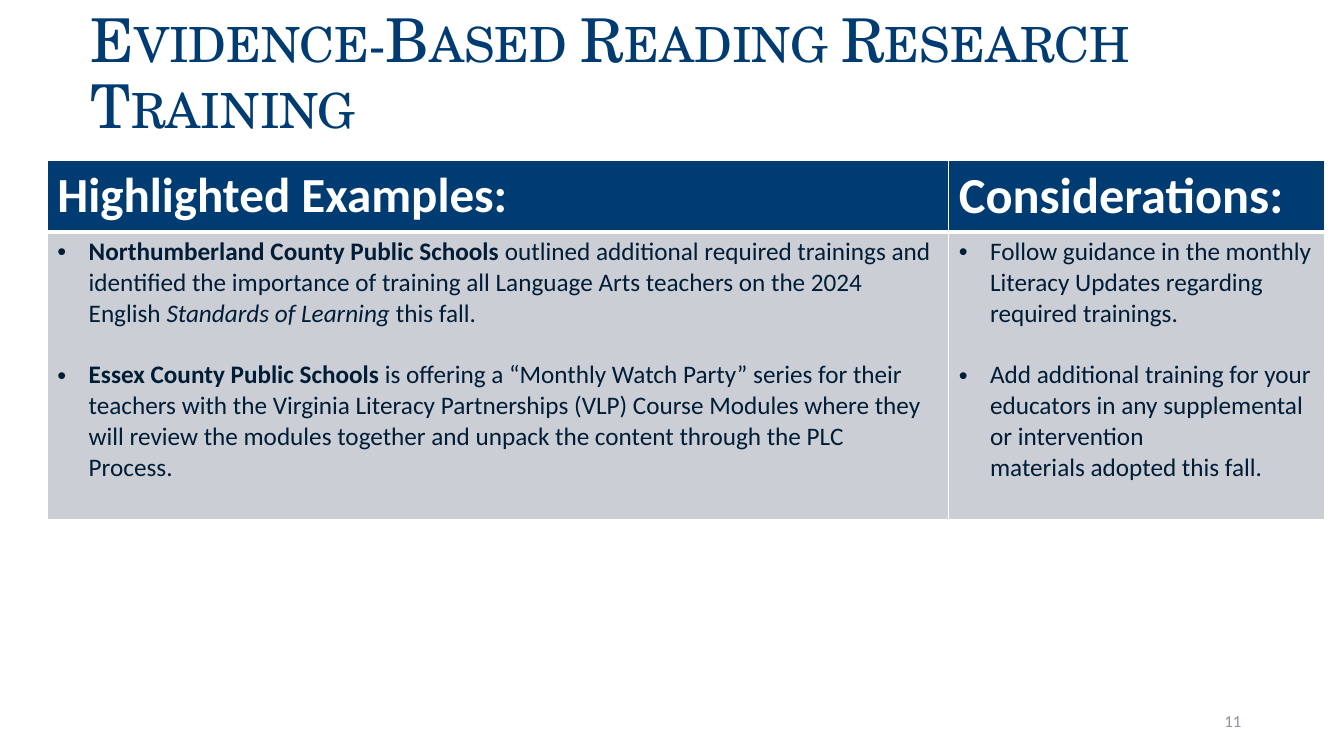
from pptx import Presentation
from pptx.dml.color import RGBColor
from pptx.enum.text import MSO_ANCHOR, PP_ALIGN
from pptx.oxml.ns import qn
from pptx.util import Inches, Pt
from lxml.etree import SubElement

COLORS = {"navy": "003C71", "ink": "001D37", "band": "CCCED5",
          "white": "FFFFFF", "grey": "8C92A5"}
SERIF, SANS = "TeX Gyre Schola", "Calibri"
NBSP = chr(160)  # keeps neighbouring words on one line


class SlideBuilder:
    def __init__(self, prs):
        self.s = prs.slides.add_slide(prs.slide_layouts[6])

    def run(self, p, text, size, color, font=SANS, style=""):
        r = p.add_run()
        r.text = text
        r.font.size, r.font.name = Pt(size), font
        r.font.bold, r.font.italic = style == "bold", style == "italic"
        r.font.color.rgb = RGBColor.from_string(COLORS[color])
        if style == "caps":
            r.font._element.set("cap", "small")

    def text(self, box, text, size, color, font=SANS, style="",
             align=PP_ALIGN.LEFT, anchor=MSO_ANCHOR.MIDDLE, left=0.1, spacing=1.0):
        tf = self.s.shapes.add_textbox(*map(Inches, box)).text_frame
        tf.word_wrap, tf.vertical_anchor = True, anchor
        tf.margin_left = Inches(left)
        p = tf.paragraphs[0]
        p.alignment, p.line_spacing = align, spacing
        self.run(p, text, size, color, font, style)

    def border(self, cell, side, width):
        ln = SubElement(cell._tc.get_or_add_tcPr(), qn("a:ln" + side), w=str(Pt(width)))
        fill = SubElement(ln, qn("a:solidFill"))
        SubElement(fill, qn("a:srgbClr"), val=COLORS["white"])

    def cell(self, cell, fill, top, bottom):
        for side, width in zip("LRTB", (1, 1, top, bottom)):
            self.border(cell, side, width)
        cell.fill.solid()
        cell.fill.fore_color.rgb = RGBColor.from_string(COLORS[fill])

    def bullets(self, tf, items):
        for i, runs in enumerate(items):
            p = tf.paragraphs[0] if i == 0 else tf.add_paragraph()
            p.space_before = Pt(22 if i else 0)
            pPr = p._p.get_or_add_pPr()
            pPr.set("marL", str(Inches(0.31)))
            pPr.set("indent", str(-Inches(0.31)))
            SubElement(pPr, qn("a:buFont"), typeface="Arial")
            SubElement(pPr, qn("a:buChar"), char="•")
            for text, style in runs:
                self.run(p, text, 18, "ink", style=style)

    def table(self, left, top, widths, heights, columns):
        table = self.s.shapes.add_table(
            2, len(columns), Inches(left), Inches(top),
            Inches(sum(widths)), Inches(sum(heights))).table
        for row, height in zip(table.rows, heights):
            row.height = Inches(height)
        for i, (heading, size, items) in enumerate(columns):
            table.columns[i].width = Inches(widths[i])
            head, body = table.cell(0, i), table.cell(1, i)
            self.cell(head, "navy", 1, 3)
            self.cell(body, "band", 3, 1)
            self.run(head.text_frame.paragraphs[0], heading, size, "white", style="bold")
            self.bullets(body.text_frame, items)


EXAMPLES = [
    [("Northumberland County Public Schools ", "bold"),
     ("outlined additional required trainings and identified the importance of "
      "training all Language Arts teachers on the 2024 English ", ""),
     ("Standards of Learning", "italic"),
     (" this fall.", "")],
    [("Essex County Public Schools", "bold"),
     (" is offering a “Monthly Watch Party” series for their teachers with the "
      "Virginia Literacy Partnerships (VLP) Course Modules where they will review "
      f"the modules together and unpack the content through the PLC Process.{NBSP}{NBSP}", "")],
]
CONSIDERATIONS = [
    [("Follow guidance in the monthly Literacy Updates regarding required trainings.", "")],
    [("Add additional training for your educators in any supplemental or "
      f"intervention materials{NBSP}adopted this fall.", "")],
]


def main():
    prs = Presentation()
    prs.slide_width, prs.slide_height = Inches(13.33), Inches(7.5)
    slide = SlideBuilder(prs)

    # Title
    slide.text((0, 0, 13.33, 1.45), "Evidence-Based Reading Research Training", 43.2,
               "navy", SERIF, "caps", anchor=MSO_ANCHOR.BOTTOM, left=0.9, spacing=0.9)

    # Examples and considerations
    slide.table(0.47, 1.59, (8.94, 3.73), (0.71, 2.85),
                [("Highlighted Examples:", 35, EXAMPLES),
                 ("Considerations:", 36, CONSIDERATIONS)])

    # Slide number
    slide.text((9.41, 6.95, 3, 0.4), "11", 12, "grey", align=PP_ALIGN.RIGHT)

    prs.save("out.pptx")


if __name__ == "__main__":
    main()
